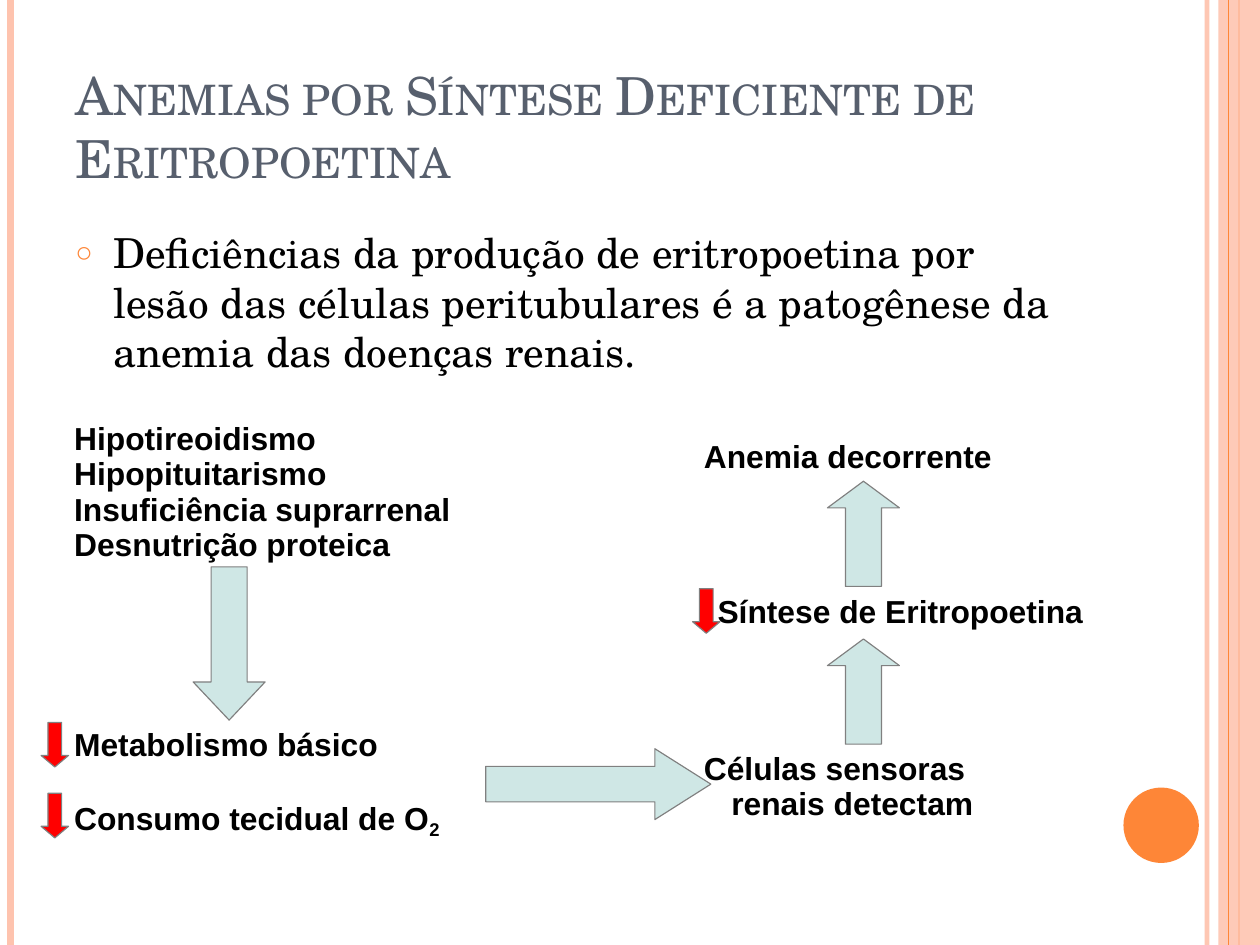
from lxml.etree import SubElement
from pptx import Presentation
from pptx.dml.color import RGBColor
from pptx.enum.shapes import MSO_CONNECTOR, MSO_SHAPE
from pptx.enum.text import MSO_ANCHOR, MSO_AUTO_SIZE, PP_ALIGN
from pptx.oxml.ns import qn
from pptx.util import Inches, Pt

PEACH = RGBColor(0xFE, 0xC3, 0xAE)
ORANGE = RGBColor(0xFE, 0x86, 0x37)
SLATE = RGBColor(0x57, 0x5F, 0x6D)
BLACK = RGBColor(0, 0, 0)
MINT = RGBColor(0xCF, 0xE7, 0xE5)
RED = RGBColor(0xFF, 0, 0)
GREY = RGBColor(0x80, 0x80, 0x80)
SERIF, SANS = "TeX Gyre Schola", "Arial"
WIDE, HIGH = Pt(793.75), Pt(595.25)


def fade(fill, percent):
    """Set the opacity of a solid fill."""
    color = fill._xPr.find(qn("a:solidFill"))[0]
    SubElement(color, qn("a:alpha"), val=str(percent * 1000))


def add_run(para, text, size, font, color, bold=False):
    run = para.add_run()
    run.text = text
    run.font.size, run.font.name, run.font.bold = Pt(size), font, bold
    run.font.color.rgb = color
    return run


def set_frame(shape, insets, wrap=True):
    frame = shape.text_frame
    frame.auto_size = MSO_AUTO_SIZE.NONE
    frame.word_wrap = wrap
    (frame.margin_left, frame.margin_top,
     frame.margin_right, frame.margin_bottom) = map(Inches, insets)
    return frame


def hang(para, indent):
    """Give a paragraph a hanging indent."""
    props = para._p.get_or_add_pPr()
    props.set("marL", str(Inches(indent)))
    props.set("indent", str(-Inches(indent)))
    return props


def add_shape(slide, kind, box, fill, line=None):
    shape = slide.shapes.add_shape(kind, *map(Inches, box))
    shape.shadow.inherit = False
    shape.fill.solid()
    shape.fill.fore_color.rgb = fill
    if line:
        shape.line.color.rgb, shape.line.width = line, Pt(0.75)
    else:
        shape.line.fill.background()
    return shape


def add_arrow(slide, kind, box, head, fill=MINT):
    arrow = add_shape(slide, kind, box, fill, GREY)
    arrow.adjustments[0], arrow.adjustments[1] = 0.5, head


def add_drop(slide, left, top):
    """Red arrow that marks a falling value."""
    add_arrow(slide, MSO_SHAPE.DOWN_ARROW, (left, top, 0.24, 0.39), 0.42, RED)


def add_label(slide, box, lines, wrap=True, gap=0):
    shape = slide.shapes.add_textbox(*map(Inches, box))
    frame = set_frame(shape, (0.1, 0.07, 0.1, 0.05), wrap)
    for i, line in enumerate(lines):
        para = frame.add_paragraph() if i else frame.paragraphs[0]
        para.line_spacing = 0.93
        para.space_before = Pt(gap if i else 0)
        hang(para, 0.24)
        add_run(para, line, 20, SANS, BLACK, True)
    return frame


def add_rule(slide, x, color, width):
    rule = slide.shapes.add_connector(
        MSO_CONNECTOR.STRAIGHT, Inches(x), 0, Inches(x), HIGH)
    rule.line.color.rgb, rule.line.width = color, Pt(width)
    SubElement(rule._element.spPr, qn("a:effectLst"))
    return rule


def add_decor(slide):
    fade(add_rule(slide, 10.56, PEACH, 3).line.fill, 93)
    add_rule(slide, 0.09, PEACH, 4.5)
    add_rule(slide, 10.84, ORANGE, 1.5)
    band = add_shape(slide, MSO_SHAPE.RECTANGLE,
                     (10.66, 0, 0.37, HIGH.inches), PEACH)
    fade(band.fill, 87)
    add_rule(slide, 10.75, ORANGE, 0.75)
    add_shape(slide, MSO_SHAPE.OVAL, (9.83, 6.89, 0.66, 0.66), ORANGE)


def add_title(slide, box):
    title = slide.shapes.title
    title.left, title.top, title.width, title.height = map(Inches, box)
    frame = set_frame(title, (0.11, 0.06, 0.11, 0.06))
    frame.vertical_anchor = MSO_ANCHOR.BOTTOM
    para = frame.paragraphs[0]
    para.alignment = PP_ALIGN.LEFT
    run = add_run(para, "Anemias por Síntese Deficiente de Eritropoetina",
                  33, SERIF, SLATE)
    run.font._element.set("cap", "small")


def add_body(slide, box):
    shape = slide.shapes.add_textbox(*map(Inches, box))
    para = set_frame(shape, (0.11, 0.06, 0.11, 0.06)).paragraphs[0]
    para.space_before = Pt(6.6)
    props = hang(para, 0.33)
    color = SubElement(props, qn("a:buClr"))
    SubElement(color, qn("a:srgbClr"), val=str(ORANGE))
    SubElement(props, qn("a:buSzPct"), val="70000")
    SubElement(props, qn("a:buFont"), typeface=SANS)
    SubElement(props, qn("a:buChar"), char="○")
    add_run(para, "Deficiências da produção de eritropoetina por lesão das células "
            "peritubulares é a patogênese da anemia das doenças renais.",
            26, SERIF, BLACK)


def add_causes(slide, x, y):
    """Left column: diseases that lower oxygen use."""
    add_label(slide, (x, y, 4.02, 1.36),
              ["Hipotireoidismo", "Hipopituitarismo",
               "Insuficiência suprarrenal", "Desnutrição proteica"])
    frame = add_label(slide, (x, y + 2.68, 3.7, 1.08),
                      ["Metabolismo básico", "Consumo tecidual de O"], gap=22.5)
    low = add_run(frame.paragraphs[1], "2", 20, SANS, BLACK, True)
    low.font._element.set("baseline", "-20000")
    add_arrow(slide, MSO_SHAPE.DOWN_ARROW, (x + 1.14, y + 1.34, 0.63, 1.34), 0.53)
    for top in (2.7, 3.32):
        add_drop(slide, x - 0.19, y + top)


def add_effects(slide, x, y):
    """Right column, read upwards: from the kidney cells to anaemia."""
    add_label(slide, (x, y, 2.95, 0.41), ["Anemia decorrente"], wrap=False)
    add_label(slide, (x + 0.12, y + 1.36, 3.63, 0.41),
              ["Síntese de Eritropoetina"], wrap=False)
    add_label(slide, (x, y + 2.73, 2.91, 0.73), ["Células sensoras renais detectam"])
    for top in (0.43, 1.81):
        add_arrow(slide, MSO_SHAPE.UP_ARROW, (x + 1.18, y + top, 0.63, 0.92), 0.37)
    add_drop(slide, x, y + 1.37)


def main():
    deck = Presentation()
    deck.slide_width, deck.slide_height = WIDE, HIGH
    slide = deck.slides.add_slide(deck.slide_layouts[5])
    add_decor(slide)
    add_title(slide, (0.55, 0.33, 9, 1.38))
    add_body(slide, (0.55, 1.93, 9, 5.88))
    add_causes(slide, 0.55, 3.62)
    add_effects(slide, 6.06, 3.78)
    add_arrow(slide, MSO_SHAPE.RIGHT_ARROW, (4.25, 6.55, 1.97, 0.62), 0.79)
    deck.save("out.pptx")


if __name__ == "__main__":
    main()
